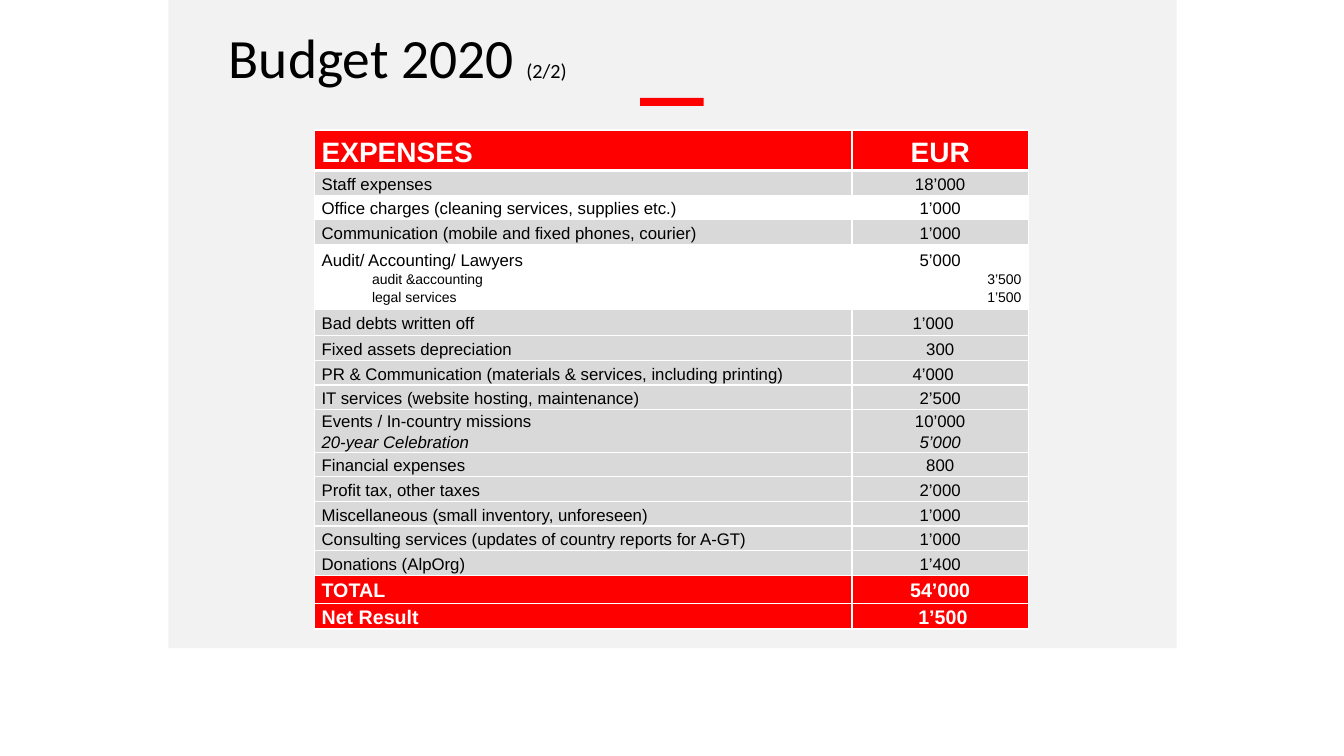
"""Build the Budget 2020 expenses slide."""
from dataclasses import dataclass

from lxml import etree
from pptx import Presentation
from pptx.dml.color import RGBColor
from pptx.enum.shapes import MSO_SHAPE
from pptx.enum.text import MSO_ANCHOR, MSO_AUTO_SIZE, PP_ALIGN
from pptx.oxml.ns import qn
from pptx.util import Pt

LEFT, CENTER, RIGHT = PP_ALIGN.LEFT, PP_ALIGN.CENTER, PP_ALIGN.RIGHT
MIDDLE = MSO_ANCHOR.MIDDLE
NO_FIT = MSO_AUTO_SIZE.NONE
RECT = MSO_SHAPE.RECTANGLE
RED, GREY, PANEL, WHITE, BLACK = "FF0000", "D9D9D9", "F2F2F2", "FFFFFF", "000000"
COLUMNS = (533, 175)
CELL_INSET = 7
SUB_INDENT = 50


def px(n: int) -> int:
    """Turn px, 100 to the inch, into EMU."""
    return n * 9144


def rgb(value: str) -> RGBColor:
    """Turn a hex string into a colour."""
    return RGBColor.from_string(value)


@dataclass
class Line:
    """One label with its amount."""
    label: str
    amount: str
    size: int = 12
    italic: bool = False
    sub: bool = False


@dataclass
class Row:
    """One table row."""
    height: int
    lines: list[Line]
    fill: str = GREY
    shift: int = 0


ROWS = [
    Row(40, [Line("EXPENSES", "EUR", 20)], RED),
    Row(25, [Line("Staff expenses", "18’000")]),
    Row(24, [Line("Office charges (cleaning services, supplies etc.)", "1’000")], WHITE),
    Row(25, [Line("Communication (mobile and fixed phones, courier)", "1’000")]),
    Row(64, [Line("Audit/ Accounting/ Lawyers", "5’000"),
             Line("audit &accounting", "3’500", 10, sub=True),
             Line("legal services", "1’500", 10, sub=True)], WHITE),
    Row(26, [Line("Bad debts written off", "1’000")], shift=14),
    Row(25, [Line("Fixed assets depreciation", "300")]),
    Row(24, [Line("PR & Communication (materials & services, including printing)",
                  "4’000")], shift=14),
    Row(24, [Line("IT services (website hosting, maintenance)", "2’500")]),
    Row(43, [Line("Events / In-country missions", "10’000"),
             Line("20-year Celebration", "5’000", italic=True)]),
    Row(24, [Line("Financial expenses", "800")]),
    Row(25, [Line("Profit tax, other taxes", "2’000")]),
    Row(24, [Line("Miscellaneous (small inventory, unforeseen)", "1’000")]),
    Row(24, [Line("Consulting services (updates of country reports for A-GT)", "1’000")]),
    Row(25, [Line("Donations (AlpOrg)", "1’400")]),
    Row(28, [Line("TOTAL", "54’000", 14)], RED),
    Row(25, [Line("Net Result", " 1’500", 14)], RED),
]


def add_rect(s, x: int, y: int, w: int, h: int, fill: str):
    """Add a plain filled rectangle."""
    sp = s.shapes.add_shape(RECT, px(x), px(y), px(w), px(h))
    sp.shadow.inherit = False
    sp.fill.solid()
    sp.fill.fore_color.rgb = rgb(fill)
    sp.line.fill.background()
    return sp


def set_borders(cell, top: int, bottom: int) -> None:
    """Give a cell white borders, widths in points."""
    tc_pr = cell._tc.get_or_add_tcPr()
    for side, width in (("L", 1), ("R", 1), ("T", top), ("B", bottom)):
        ln = etree.SubElement(tc_pr, qn(f"a:ln{side}"), w=str(Pt(width)))
        fill = etree.SubElement(ln, qn("a:solidFill"))
        etree.SubElement(fill, qn("a:srgbClr"), val=WHITE)


def fill_cell(cell, row: Row, is_amount: bool) -> None:
    """Write and format one column of a row."""
    cell.vertical_anchor = MIDDLE
    cell.margin_left = px(CELL_INSET)
    cell.margin_right = px(CELL_INSET + (row.shift if is_amount else 0))
    cell.margin_top = cell.margin_bottom = 0
    cell.fill.solid()
    cell.fill.fore_color.rgb = rgb(row.fill)
    tf = cell.text_frame
    tf.text = "\n".join(l.amount if is_amount else l.label for l in row.lines)
    for p, line in zip(tf.paragraphs, row.lines):
        p.line_spacing = 1.15
        if is_amount:
            p.alignment = RIGHT if line.sub else CENTER
        elif line.sub:
            p.level = 1
            p._p.get_or_add_pPr().set("marL", str(px(SUB_INDENT)))
            p._p.get_or_add_pPr().set("indent", "0")
        font = p.runs[0].font
        font.name, font.size = "Arial", Pt(line.size)
        font.bold, font.italic = row.fill == RED, line.italic
        font.color.rgb = rgb(WHITE if row.fill == RED else BLACK)


def add_budget_table(s) -> None:
    """Add the expenses table."""
    height = sum(row.height for row in ROWS)
    table = s.shapes.add_table(len(ROWS), len(COLUMNS), px(312), px(129),
                               px(sum(COLUMNS)), px(height)).table
    table.horz_banding = False
    for column, width in zip(table.columns, COLUMNS):
        column.width = px(width)
    for i, row in enumerate(ROWS):
        table.rows[i].height = px(row.height)
        for j in range(len(COLUMNS)):
            cell = table.cell(i, j)
            set_borders(cell, 3 if i == 1 else 1, 3 if i == 0 else 1)
            fill_cell(cell, row, j == 1)


def format_title(sp) -> None:
    """Place and write the title."""
    sp.left, sp.top, sp.width, sp.height = px(217), px(30), px(900), px(61)
    tf = sp.text_frame
    tf.word_wrap, tf.auto_size, tf.vertical_anchor = True, NO_FIT, MIDDLE
    p = tf.paragraphs[0]
    p.alignment, p.line_spacing = LEFT, 0.9
    for text, size in (("Budget 2020 ", 39.6), ("(2/2)", 14.4)):
        r = p.add_run()
        r.text = text
        r.font.name, r.font.size = "Calibri", Pt(size)
        r.font.color.rgb = rgb(BLACK)


def main() -> None:
    """Build and save the slide."""
    prs = Presentation()
    prs.slide_width, prs.slide_height = px(1333), px(750)
    s = prs.slides.add_slide(prs.slide_layouts[5])
    title = s.shapes.title
    format_title(title)
    panel = add_rect(s, 167, 0, 1000, 643, PANEL)
    title.element.addprevious(panel.element)
    add_rect(s, 635, 97, 63, 8, RED)
    add_budget_table(s)
    prs.save("out.pptx")


if __name__ == "__main__":
    main()
